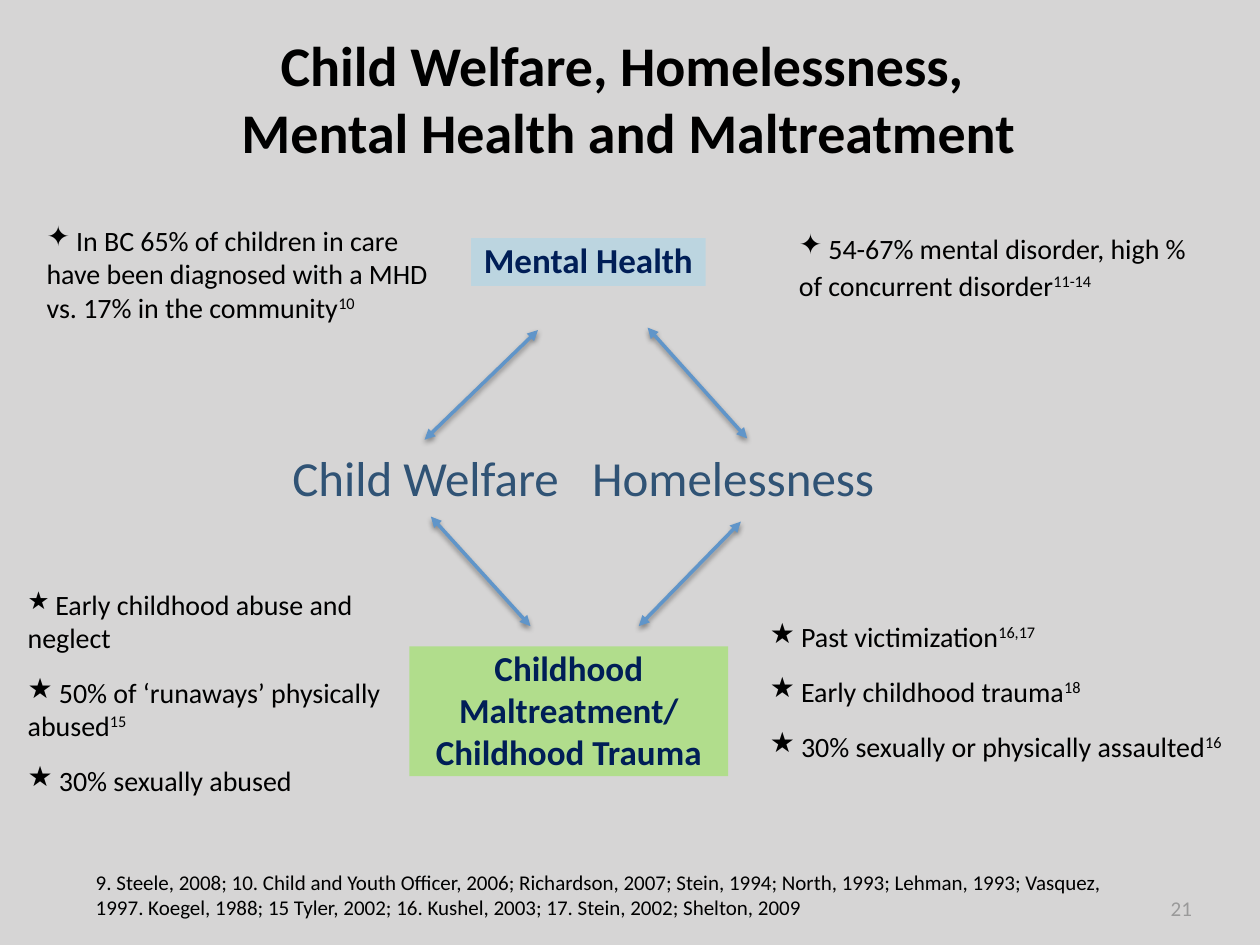
import pptx
import pptx.util
import pptx.dml.color
import pptx.enum.text
import pptx.enum.shapes
import pptx.oxml
from lxml import etree

prs = pptx.Presentation()
prs.slide_width = pptx.util.Inches(10)
prs.slide_height = pptx.util.Inches(7.5)
col = prs.slide_width / 100
row = prs.slide_height / 75
A = "http://schemas.openxmlformats.org/drawingml/2006/main"
ALIGN = pptx.enum.text.PP_ALIGN
ANCHOR = pptx.enum.text.MSO_ANCHOR


def rgb(hex_color):
    return pptx.dml.color.RGBColor.from_string(hex_color)


def write(sp, paragraphs, size, color="000000", bold=False, align=ALIGN.LEFT,
          inset=0, anchor=ANCHOR.TOP, bullet=None, before=0, spacing=None, hanging=0):
    tf = sp.text_frame
    tf.word_wrap = True
    tf.vertical_anchor = anchor
    tf.margin_left = tf.margin_right = tf.margin_top = tf.margin_bottom = int(inset * col)
    for i, parts in enumerate(paragraphs):
        p = tf.add_paragraph() if i else tf.paragraphs[0]
        p.alignment = align
        p.space_before = pptx.util.Pt(before if i else 0)
        if spacing:
            p.line_spacing = spacing
        pPr = p._p.get_or_add_pPr()
        pPr.set("marL", str(int(hanging * col)))
        pPr.set("indent", str(int(-hanging * col)))
        if bullet:
            etree.SubElement(pPr, f"{{{A}}}buChar").set("char", bullet)
        for part in parts.split("|"):
            r = p.add_run()
            r.text = part.lstrip("^")
            r.font.name = "Calibri"
            r.font.size = pptx.util.Pt(size)
            r.font.bold = bold
            r.font.color.rgb = rgb(color)
            if part.startswith("^"):
                r._r.get_or_add_rPr().set("baseline", "32000")
    return tf


s = prs.slides.add_slide(prs.slide_layouts[6])
s.background.fill.solid()
s.background.fill.fore_color.rgb = rgb("D6D5D5")

arrows = [
    (42.7, 26.2, 33.7, 34.9),
    (51.4, 26, 59.3, 34.8),
    (34.2, 41, 42.1, 49.7),
    (58.8, 41.4, 50.7, 49.7),
]
for x1, y1, x2, y2 in arrows:
    line = s.shapes.add_connector(pptx.enum.shapes.MSO_CONNECTOR.STRAIGHT,
                                  int(x1 * col), int(y1 * row), int(x2 * col), int(y2 * row))
    line.line.color.rgb = rgb("6095C9")
    line.line.width = pptx.util.Pt(2)
    ln = line.line._get_or_add_ln()
    for end in ("headEnd", "tailEnd"):
        etree.SubElement(ln, f"{{{A}}}{end}").set("type", "triangle")
    line._element.spPr.append(pptx.oxml.parse_xml(
        f'<a:effectLst xmlns:a="{A}"><a:outerShdw blurRad="38100" dist="20320" dir="5400000" rotWithShape="0">'
        '<a:srgbClr val="000000"><a:alpha val="38000"/></a:srgbClr></a:outerShdw></a:effectLst>'))

topics = [
    ((37.4, 18.9, 18.6, 3.8), "76D6FF", 27, ["Mental Health"]),
    ((32.5, 51.3, 25.3, 10.3), "B1DD8C", 100, ["Childhood Maltreatment/", "Childhood Trauma"]),
]
for (x, y, w, h), fill, opacity, lines in topics:
    sp = s.shapes.add_shape(pptx.enum.shapes.MSO_SHAPE.RECTANGLE,
                            int(x * col), int(y * row), int(w * col), int(h * row))
    sp.shadow.inherit = False
    sp.fill.solid()
    sp.fill.fore_color.rgb = rgb(fill)
    if opacity < 100:
        clr = sp._element.spPr.find(f".//{{{A}}}srgbClr")
        etree.SubElement(clr, f"{{{A}}}alpha").set("val", str(opacity * 1000))
    sp.line.fill.background()
    write(sp, lines, 20, "001E57", True, ALIGN.CENTER)

heading = dict(size=28, color="305375", hanging=3.8)
stars = dict(size=16, bullet="★", before=12, inset=0.4)
sparkle = dict(size=16, bullet="✦")
texts = [
    ((14.4, 2.4, 71, 10.8), ["Child Welfare, Homelessness, ", "Mental Health and Maltreatment"],
     dict(size=32, bold=True, align=ALIGN.CENTER)),
    ((22.8, 35.1, 23.8, 6.3), ["Child Welfare"], dict(heading, inset=0.4)),
    ((47, 35.5, 23.8, 5.2), ["Homelessness"], heading),
    ((3.7, 17.7, 32.6, 7.9),
     [" In BC 65% of children in care have been diagnosed with a MHD vs. 17% in the community|^10"], sparkle),
    ((63.4, 18.1, 31.5, 5.6),
     [" 54-67% mental disorder, high % of concurrent disorder|^11-14"], dict(sparkle, spacing=1.1)),
    ((60.7, 48.8, 39, 12.1),
     [" Past victimization|^16,17", " Early childhood trauma|^18",
      " 30% sexually or physically assaulted|^16"], stars),
    ((7.6, 69, 81.8, 3.9),
     ["9. Steele, 2008; 10. Child and Youth Officer, 2006; Richardson, 2007; Stein, 1994; North, 1993; "
      "Lehman, 1993; Vasquez, 1997. Koegel, 1988; 15 Tyler, 2002; 16. Kushel, 2003; 17. Stein, 2002; "
      "Shelton, 2009"], dict(size=12)),
    ((92.3, 70.7, 2.7, 2.8), ["21"],
     dict(size=12, color="9A9A9A", align=ALIGN.RIGHT, anchor=ANCHOR.BOTTOM, inset=0.4)),
    ((1.8, 46.2, 29, 17.4),
     [" |Early childhood abuse and neglect", " 50% of ‘runaways’ physically abused|^15",
      " 30% sexually abused"], stars),
]
for (x, y, w, h), paragraphs, style in texts:
    sp = s.shapes.add_textbox(int(x * col), int(y * row), int(w * col), int(h * row))
    tf = write(sp, paragraphs, **style)
tf.paragraphs[0].runs[0].font.size = pptx.util.Pt(14)

prs.save("out.pptx")
